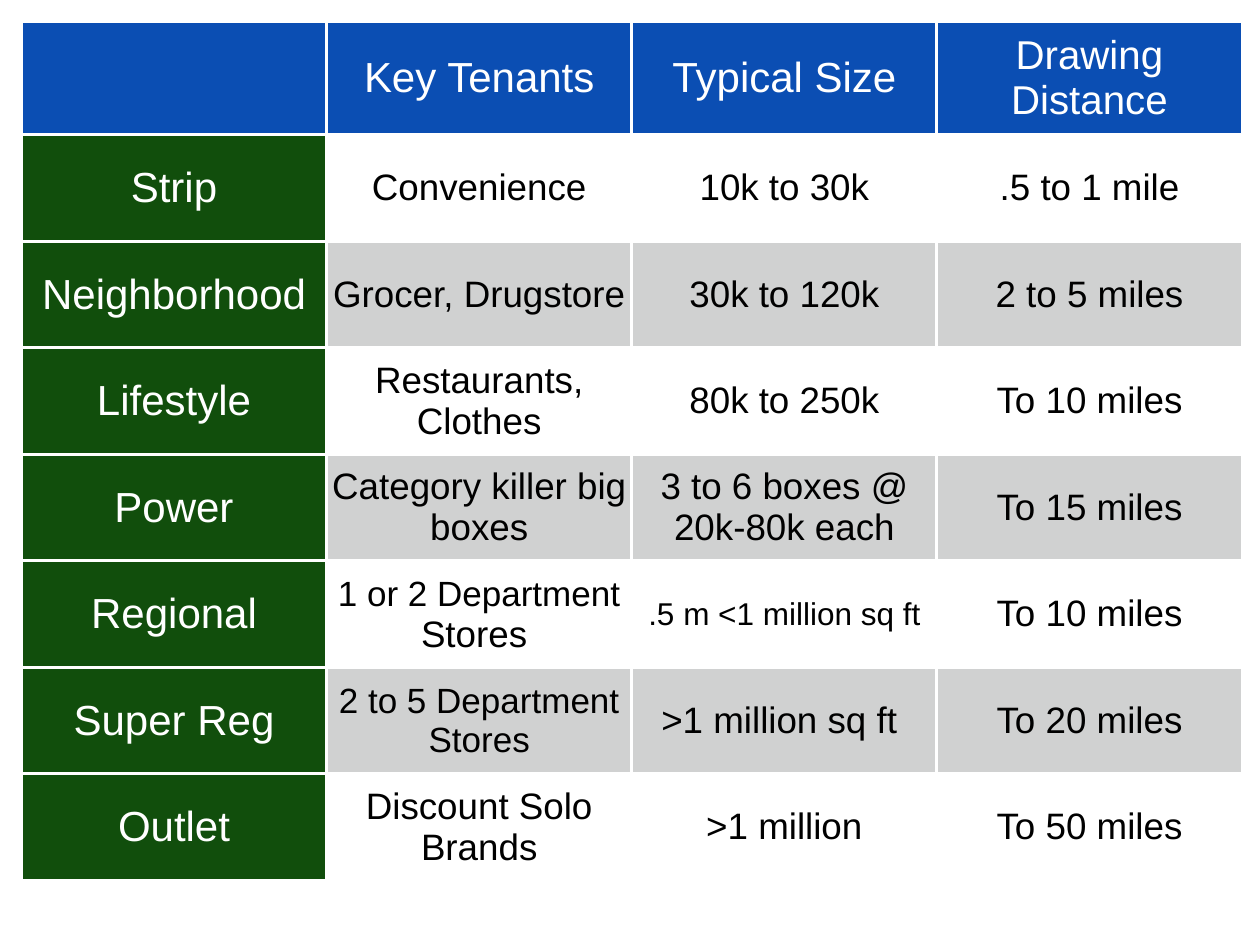
from dataclasses import dataclass
from typing import Optional

from lxml.etree import SubElement
from pptx import Presentation
from pptx.dml.color import RGBColor
from pptx.enum.text import MSO_ANCHOR, PP_ALIGN
from pptx.oxml import parse_xml
from pptx.oxml.ns import nsdecls, qn
from pptx.table import _Cell
from pptx.util import Pt

WHITE = RGBColor(0xFF, 0xFF, 0xFF)
BLACK = RGBColor(0x00, 0x00, 0x00)
BLUE = RGBColor(0x0B, 0x4E, 0xB3)
GREEN = RGBColor(0x11, 0x4E, 0x0C)
GRAY = RGBColor(0x66, 0x67, 0x68)

LEFT, TOP = 12.24, 12.24
COLUMN_WIDTH = 174.4
HEADER_HEIGHT, BODY_HEIGHT = 64.8, 60.86
BORDER_WIDTH = 2
BAND_OPACITY = 30


@dataclass(frozen=True)
class Span:
    text: str
    size: Optional[float] = None  # None takes the size of the cell's style


@dataclass(frozen=True)
class CellStyle:
    size: float
    color: RGBColor
    margin: float
    fill: Optional[RGBColor] = None
    opacity: int = 100


HEADER = CellStyle(24, WHITE, 3.6, BLUE)
CENTER_TYPE = CellStyle(24, WHITE, 3.6, GREEN)
PLAIN = CellStyle(21, BLACK, 2.8)
BANDED = CellStyle(21, BLACK, 2.8, GRAY, BAND_OPACITY)

# Each cell is a list of spans
ROWS = [
    [[], [Span("Key Tenants")], [Span("Typical Size")], [Span("Drawing Distance", 23)]],
    [[Span("Strip")], [Span("Convenience")], [Span("10k to 30k")], [Span(".5 to 1 mile")]],
    [[Span("Neighborhood")], [Span("Grocer, Drugstore")], [Span("30k to 120k")],
     [Span("2 to 5 miles")]],
    [[Span("Lifestyle")], [Span("Restaurants, Clothes")], [Span("80k to 250k")],
     [Span("To 10 miles")]],
    [[Span("Power")], [Span("Category killer big boxes")],
     [Span("3 to 6 boxes @ 20k-80k each")], [Span("To 15 miles")]],
    [[Span("Regional")], [Span("1 or 2 Department", 20), Span(" Stores ")],
     [Span(".5 m <1 million sq ft", 18)], [Span("To 10 miles")]],
    [[Span("Super Reg")], [Span("2 to 5 Department Stores", 20)],
     [Span(">1 million sq ft ")], [Span("To 20 miles")]],
    [[Span("Outlet")], [Span("Discount Solo Brands")], [Span(">1 million")],
     [Span("To 50 miles")]],
]


def add_span(para, text: str, *, size: float, color: RGBColor, font: str = "Arial") -> None:
    run = para.add_run()
    run.text = text
    run.font.name = font
    run.font.size = Pt(size)
    run.font.color.rgb = color


def fill_cell(cell: _Cell, style: CellStyle) -> None:
    if style.fill is None:
        cell.fill.background()
        return
    cell.fill.solid()
    cell.fill.fore_color.rgb = style.fill
    if style.opacity < 100:
        color = cell._tc.tcPr.find(f".//{qn('a:srgbClr')}")
        SubElement(color, qn("a:alpha"), val=str(style.opacity * 1000))


def add_borders(cell: _Cell) -> None:
    # Border lines must come before the fill in the cell properties
    for index, side in enumerate(("lnL", "lnR", "lnT", "lnB")):
        line = parse_xml(
            f'<a:{side} {nsdecls("a")} w="{Pt(BORDER_WIDTH)}"><a:solidFill>'
            f'<a:srgbClr val="{WHITE}"/></a:solidFill></a:{side}>'
        )
        cell._tc.tcPr.insert(index, line)


def draw_cell(cell: _Cell, spans: list[Span], style: CellStyle) -> None:
    cell.vertical_anchor = MSO_ANCHOR.MIDDLE
    cell.margin_left = cell.margin_right = Pt(style.margin)
    cell.margin_top = cell.margin_bottom = Pt(style.margin)
    fill_cell(cell, style)
    add_borders(cell)
    para = cell.text_frame.paragraphs[0]
    para.alignment = PP_ALIGN.CENTER
    for span in spans:
        add_span(para, span.text, size=span.size or style.size, color=style.color)


def style_for(row: int, column: int) -> CellStyle:
    if row == 0:
        return HEADER
    if column == 0:
        return CENTER_TYPE
    return PLAIN if row % 2 else BANDED


def main() -> None:
    deck = Presentation()
    deck.slide_width, deck.slide_height = Pt(720), Pt(540)
    page = deck.slides.add_slide(deck.slide_layouts[6])

    # Table grid
    row_count, column_count = len(ROWS), len(ROWS[0])
    table = page.shapes.add_table(
        row_count, column_count, Pt(LEFT), Pt(TOP), Pt(COLUMN_WIDTH * column_count),
        Pt(HEADER_HEIGHT + BODY_HEIGHT * (row_count - 1)),
    ).table
    table.first_row = table.horz_banding = False
    for column in table.columns:
        column.width = Pt(COLUMN_WIDTH)
    for index, row in enumerate(table.rows):
        row.height = Pt(BODY_HEIGHT if index else HEADER_HEIGHT)

    # Cell contents
    for row_index, row in enumerate(ROWS):
        for column_index, spans in enumerate(row):
            draw_cell(table.cell(row_index, column_index), spans,
                      style_for(row_index, column_index))

    deck.save("out.pptx")


if __name__ == "__main__":
    main()
